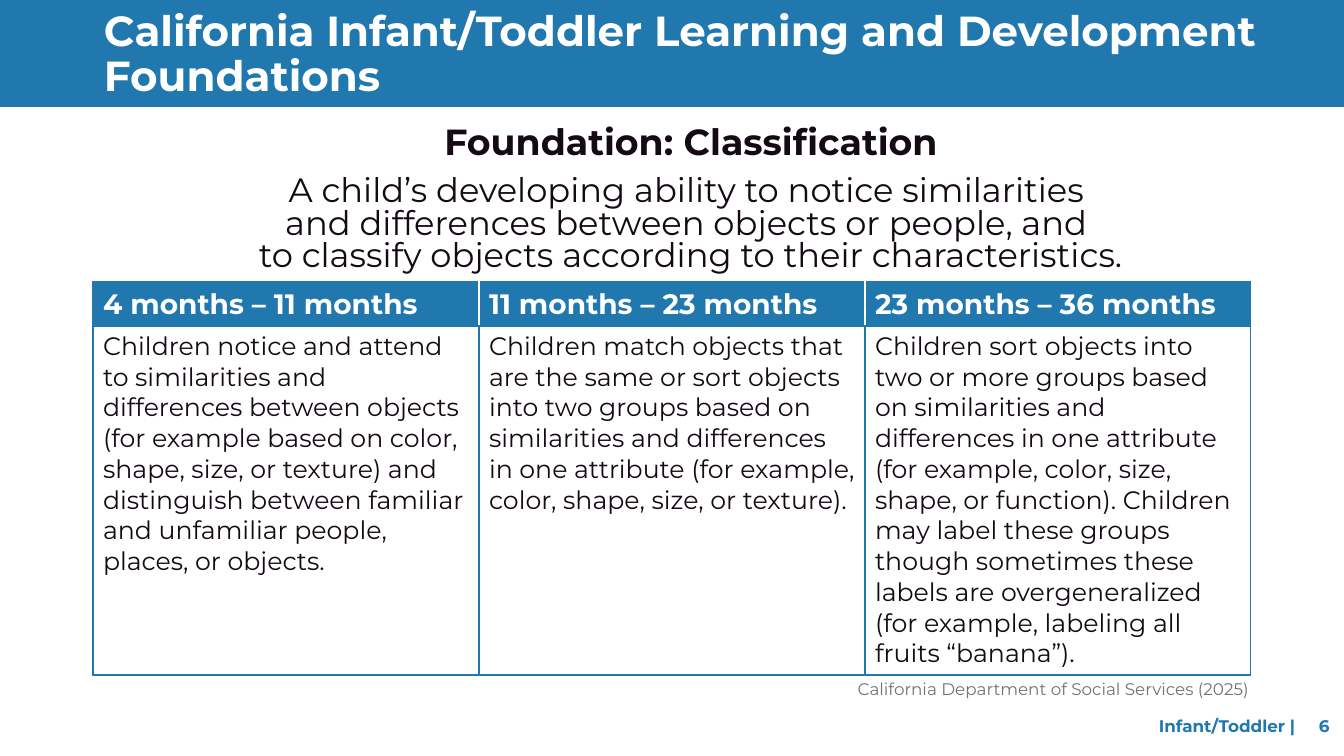
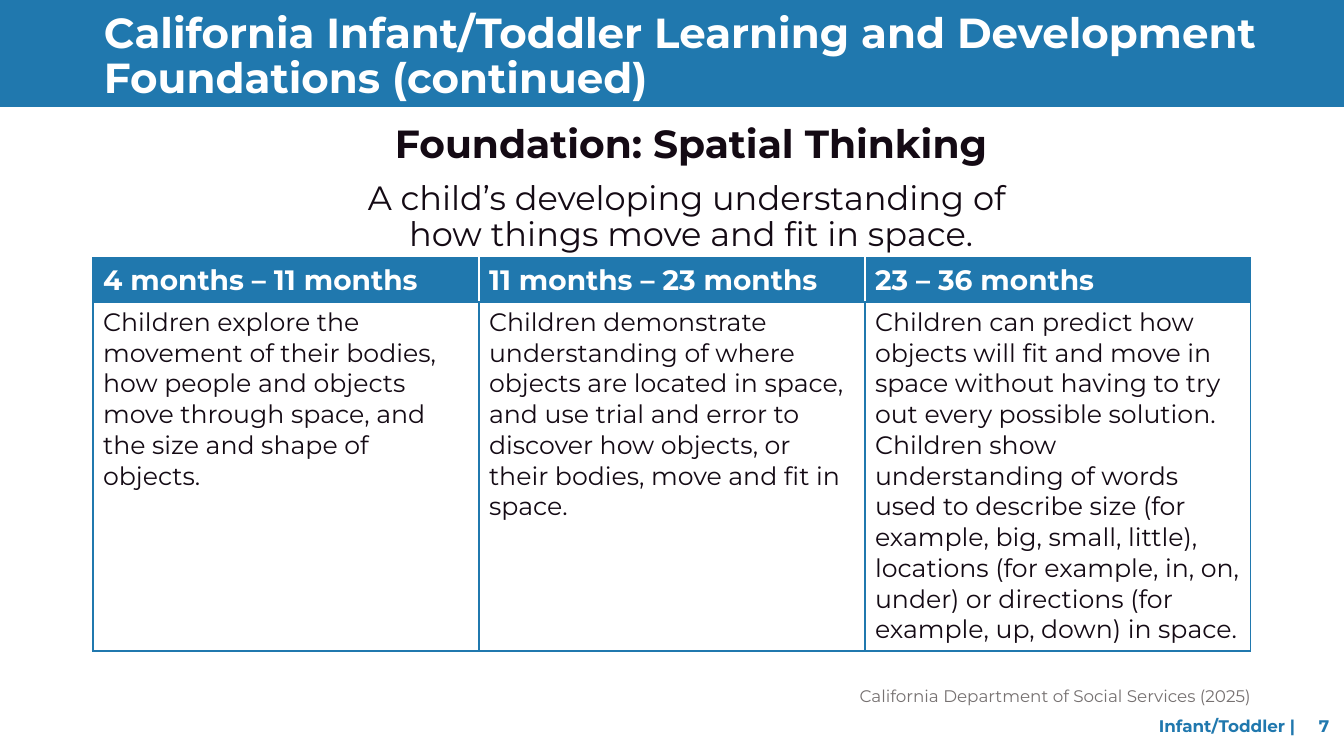
import pptx
import pptx.dml.color
import pptx.enum.shapes
import pptx.enum.text
import pptx.oxml
import pptx.oxml.ns
import pptx.util

EMU_PER_PX = 12192000 / 1344
SLIDE_WIDTH, SLIDE_HEIGHT = 1344, 756
FONT = "Montserrat"
COLORS = {"blue": "2078AE", "white": "FFFFFF", "ink": "140A14", "gray": "767171"}
ALIGN = pptx.enum.text.PP_ALIGN
ANCHOR = pptx.enum.text.MSO_ANCHOR

COLUMN_WIDTH = 386
HEADER_HEIGHT, BODY_HEIGHT = 44, 349
TABLE_LEFT = 93

SLIDES = [
    {
        "number": 6,
        "title": "California Infant/Toddler Learning and Development Foundations",
        "title_top": 5,
        "heading": "Foundation: Classification",
        "definition": "A child’s developing ability to notice similarities \v"
                      "and differences between objects or people, and \v"
                      "to classify objects according to their characteristics.",
        "intro_box": (94, 123, 1194, 167),
        "intro_sizes": (25.9, 24.1),
        "intro_spacing": 0.8,
        "table_top": 282,
        "ages": ["4 months – 11 months", "11 months – 23 months", "23 months – 36 months"],
        "skills": [
            "Children notice and attend to similarities and differences between objects "
            "(for example based on color, shape, size, or texture) and distinguish between "
            "familiar and unfamiliar people, places, or objects.",
            "Children match objects that are the same or sort objects into two groups based on "
            "similarities and differences in one attribute (for example, color, shape, size, "
            "or texture).",
            "Children sort objects into two or more groups based on similarities and differences "
            "in one attribute (for example, color, size, shape, or function). Children may label "
            "these groups though sometimes these labels are overgeneralized (for example, "
            "labeling all fruits “banana”).",
        ],
        "credit_box": (85, 674, 1174, 30),
    },
    {
        "number": 7,
        "title": "California Infant/Toddler Learning and Development Foundations (continued)",
        "title_top": 7,
        "heading": "Foundation: Spatial Thinking",
        "definition": "A child’s developing understanding of \vhow things move and fit in space.",
        "intro_box": (94, 120, 1194, 154),
        "intro_sizes": (28, 24),
        "intro_spacing": 0.9,
        "table_top": 258,
        "ages": ["4 months – 11 months", "11 months – 23 months", "23 – 36 months"],
        "skills": [
            "Children explore the movement of their bodies, how people and objects move through "
            "space, and the size and shape of objects.",
            "Children demonstrate understanding of where objects are located in space, and use "
            "trial and error to discover how objects, or their bodies, move and fit in space.",
            "Children can predict how objects will fit and move in space without having to try "
            "out every possible solution. Children show understanding of words used to describe "
            "size (for example, big, small, little), locations (for example, in, on, under) or "
            "directions (for example, up, down) in space.",
        ],
        "credit_box": (83, 681, 1178, 30),
    },
]


def px(length):
    return pptx.util.Emu(round(length * EMU_PER_PX))


def rgb(color):
    return pptx.dml.color.RGBColor.from_string(COLORS[color])


def write(paragraph, text, size, color, bold=False, align=ALIGN.LEFT, spacing=None):
    paragraph.text = text
    paragraph.alignment = align
    if spacing:
        paragraph.line_spacing = spacing
    for run in paragraph.runs:
        run.font.name = FONT
        run.font.size = pptx.util.Pt(size)
        run.font.bold = bold
        run.font.color.rgb = rgb(color)


def add_text_frame(slide, box, anchor=ANCHOR.TOP):
    text_frame = slide.shapes.add_textbox(*map(px, box)).text_frame
    text_frame.word_wrap = True
    text_frame.vertical_anchor = anchor
    return text_frame


def add_band(slide):
    band = slide.shapes.add_shape(
        pptx.enum.shapes.MSO_SHAPE.RECTANGLE, 0, 0, px(SLIDE_WIDTH), px(107))
    band.shadow.inherit = False
    band.fill.solid()
    band.fill.fore_color.rgb = rgb("blue")
    band.line.fill.background()


def add_footer(slide, number):
    paragraph = add_text_frame(slide, (1149, 706, 192, 40), ANCHOR.MIDDLE).paragraphs[0]
    paragraph._p.get_or_add_pPr().append(pptx.oxml.parse_xml(
        f'<a:tabLst {pptx.oxml.ns.nsdecls("a")}><a:tab pos="{px(160)}" algn="l"/></a:tabLst>'))
    write(paragraph, f"Infant/Toddler |\t{number}", 12, "blue", bold=True)


def add_title(slide, text, top):
    paragraph = add_text_frame(slide, (94, top, 1194, 102)).paragraphs[0]
    write(paragraph, text, 30, "white", bold=True, spacing=0.9)


def add_intro(slide, content):
    text_frame = add_text_frame(slide, content["intro_box"])
    heading_size, definition_size = content["intro_sizes"]
    spacing = content["intro_spacing"]
    write(text_frame.paragraphs[0], content["heading"], heading_size, "ink",
          bold=True, align=ALIGN.CENTER, spacing=spacing)
    definition = text_frame.add_paragraph()
    definition.space_before = pptx.util.Pt(10)
    write(definition, content["definition"], definition_size, "ink",
          align=ALIGN.CENTER, spacing=spacing)


def set_borders(cell, left, right):
    properties = cell._tc.get_or_add_tcPr()
    for side, color in (("L", left), ("R", right), ("T", "blue"), ("B", "blue")):
        properties.append(pptx.oxml.parse_xml(
            f'<a:ln{side} {pptx.oxml.ns.nsdecls("a")} w="12700"><a:solidFill>'
            f'<a:srgbClr val="{COLORS[color]}"/></a:solidFill></a:ln{side}>'))


def fill_cell(cell, text, size, color, fill, bold, left, right):
    set_borders(cell, left, right)
    cell.fill.solid()
    cell.fill.fore_color.rgb = rgb(fill)
    write(cell.text_frame.paragraphs[0], text, size, color, bold=bold)


def add_age_table(slide, top, ages, skills):
    count = len(ages)
    table = slide.shapes.add_table(
        2, count, px(TABLE_LEFT), px(top),
        px(COLUMN_WIDTH * count), px(HEADER_HEIGHT + BODY_HEIGHT)).table
    table.horz_banding = False
    table.rows[0].height = px(HEADER_HEIGHT)
    table.rows[1].height = px(BODY_HEIGHT)
    for index, (age, skill) in enumerate(zip(ages, skills)):
        table.columns[index].width = px(COLUMN_WIDTH)
        left = "blue" if index == 0 else "white"
        right = "blue" if index == count - 1 else "white"
        fill_cell(table.cell(0, index), age, 20, "white", "blue", True, left, right)
        fill_cell(table.cell(1, index), skill, 18, "ink", "white", False, "blue", "blue")


def add_credit(slide, box):
    write(add_text_frame(slide, box).paragraphs[0],
          "California Department of Social Services (2025)", 12, "gray", align=ALIGN.RIGHT)


def add_foundation_slide(presentation, content):
    slide = presentation.slides.add_slide(presentation.slide_layouts[6])
    add_band(slide)
    add_footer(slide, content["number"])
    add_title(slide, content["title"], content["title_top"])
    add_intro(slide, content)
    add_age_table(slide, content["table_top"], content["ages"], content["skills"])
    add_credit(slide, content["credit_box"])


def main():
    presentation = pptx.Presentation()
    presentation.slide_width = px(SLIDE_WIDTH)
    presentation.slide_height = px(SLIDE_HEIGHT)
    for content in SLIDES:
        add_foundation_slide(presentation, content)
    presentation.save("out.pptx")


if __name__ == "__main__":
    main()
